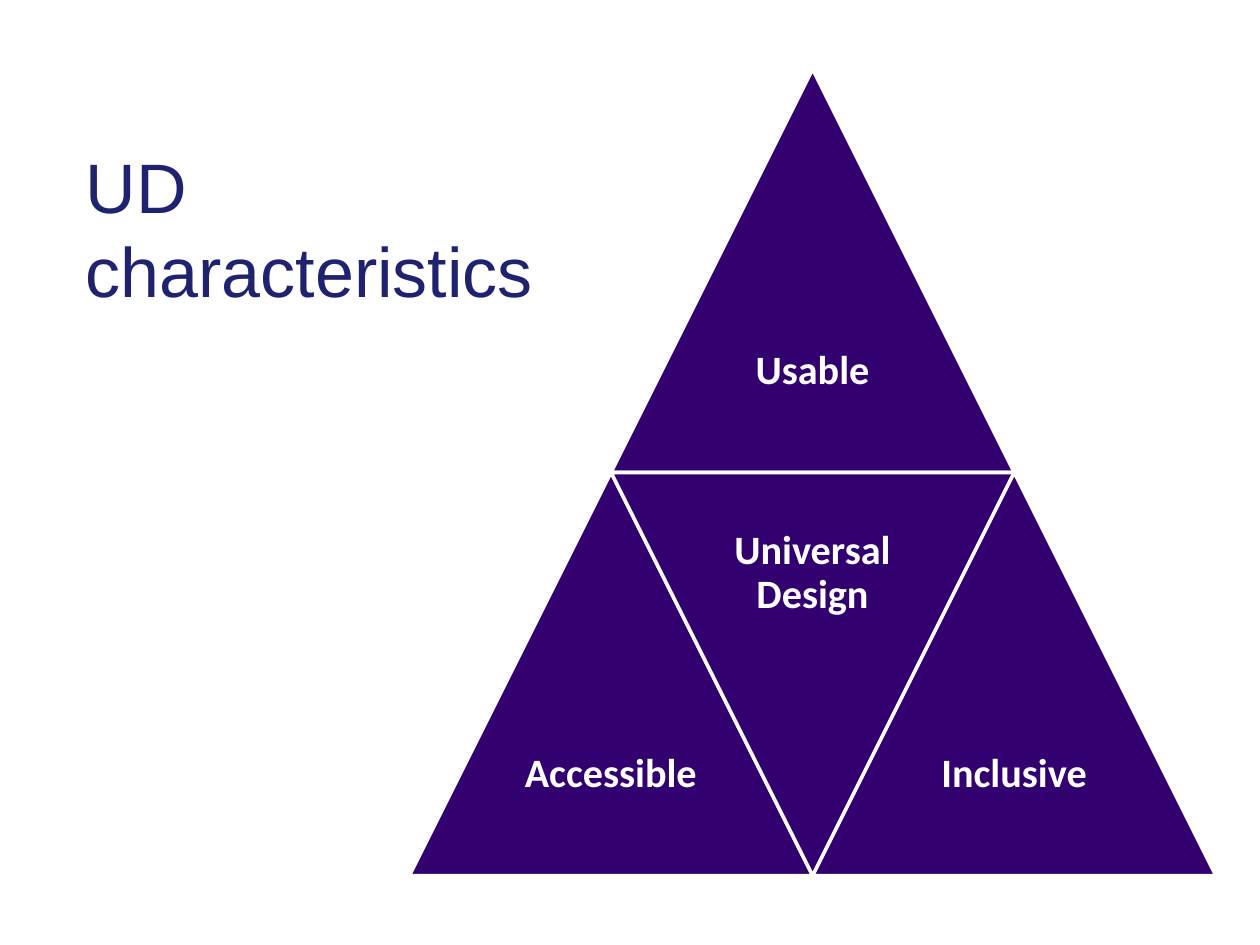
from dataclasses import dataclass

from pptx import Presentation
from pptx.dml.color import RGBColor
from pptx.enum.shapes import MSO_SHAPE
from pptx.enum.text import MSO_ANCHOR, MSO_AUTO_SIZE, PP_ALIGN
from pptx.util import Pt


@dataclass(frozen=True)
class Theme:
    title_color: RGBColor = RGBColor(0x1F, 0x23, 0x6F)
    triangle_fill: RGBColor = RGBColor(0x33, 0x00, 0x6F)
    white: RGBColor = RGBColor(0xFF, 0xFF, 0xFF)
    title_font: str = "Arial"
    label_font: str = "Calibri"
    title_size: float = 40
    title_spacing: float = 48
    label_size: float = 23
    outline: float = 2


THEME = Theme()
SIDE = 230.4
PYRAMID_LEFT = 234
PYRAMID_TOP = 39.6
TRIANGLES = [
    ("Usable", 0.5, 0, False),
    ("Accessible", 0, 1, False),
    ("Universal Design", 0.5, 1, True),
    ("Inclusive", 1, 1, False),
]


def add_run(paragraph, text, font_name, size, color, bold=False):
    run = paragraph.add_run()
    run.text = text
    run.font.name = font_name
    run.font.size = Pt(size)
    run.font.color.rgb = color
    run.font.bold = bold


def set_title(slide, text):
    title = slide.shapes.title
    title.left, title.top = Pt(41.8), Pt(78.5)
    title.width, title.height = Pt(288), Pt(98.6)
    frame = title.text_frame
    frame.word_wrap = True
    frame.auto_size = MSO_AUTO_SIZE.NONE
    frame.vertical_anchor = MSO_ANCHOR.TOP
    heading = frame.paragraphs[0]
    heading.alignment = PP_ALIGN.LEFT
    heading.line_spacing = Pt(THEME.title_spacing)
    add_run(heading, text, THEME.title_font, THEME.title_size, THEME.title_color)


def add_triangle(pyramid, left, top, inverted):
    triangle = pyramid.shapes.add_shape(
        MSO_SHAPE.ISOSCELES_TRIANGLE, Pt(left), Pt(top), Pt(SIDE), Pt(SIDE)
    )
    triangle.rotation = 180 if inverted else 0
    triangle.shadow.inherit = False
    triangle.fill.solid()
    triangle.fill.fore_color.rgb = THEME.triangle_fill
    triangle.line.color.rgb = THEME.white
    triangle.line.width = Pt(THEME.outline)


def add_label(pyramid, text, left, top):
    label = pyramid.shapes.add_textbox(Pt(left), Pt(top), Pt(SIDE / 2), Pt(SIDE / 2))
    frame = label.text_frame
    frame.word_wrap = True
    frame.vertical_anchor = MSO_ANCHOR.MIDDLE
    frame.margin_left = frame.margin_right = Pt(7.2)
    frame.margin_top = frame.margin_bottom = Pt(7.2)
    caption = frame.paragraphs[0]
    caption.alignment = PP_ALIGN.CENTER
    caption.line_spacing = 0.9
    add_run(caption, text, THEME.label_font, THEME.label_size, THEME.white, bold=True)


def add_pyramid(slide):
    pyramid = slide.shapes.add_group_shape()
    for text, column, row, inverted in TRIANGLES:
        left = PYRAMID_LEFT + column * SIDE
        top = PYRAMID_TOP + row * SIDE
        add_triangle(pyramid, left, top, inverted)
        label_top = top if inverted else top + SIDE / 2
        add_label(pyramid, text, left + SIDE / 4, label_top)


def main():
    deck = Presentation()
    deck.slide_width, deck.slide_height = Pt(720), Pt(540)
    slide = deck.slides.add_slide(deck.slide_layouts[5])
    set_title(slide, "UD characteristics")
    add_pyramid(slide)
    deck.save("out.pptx")


if __name__ == "__main__":
    main()
